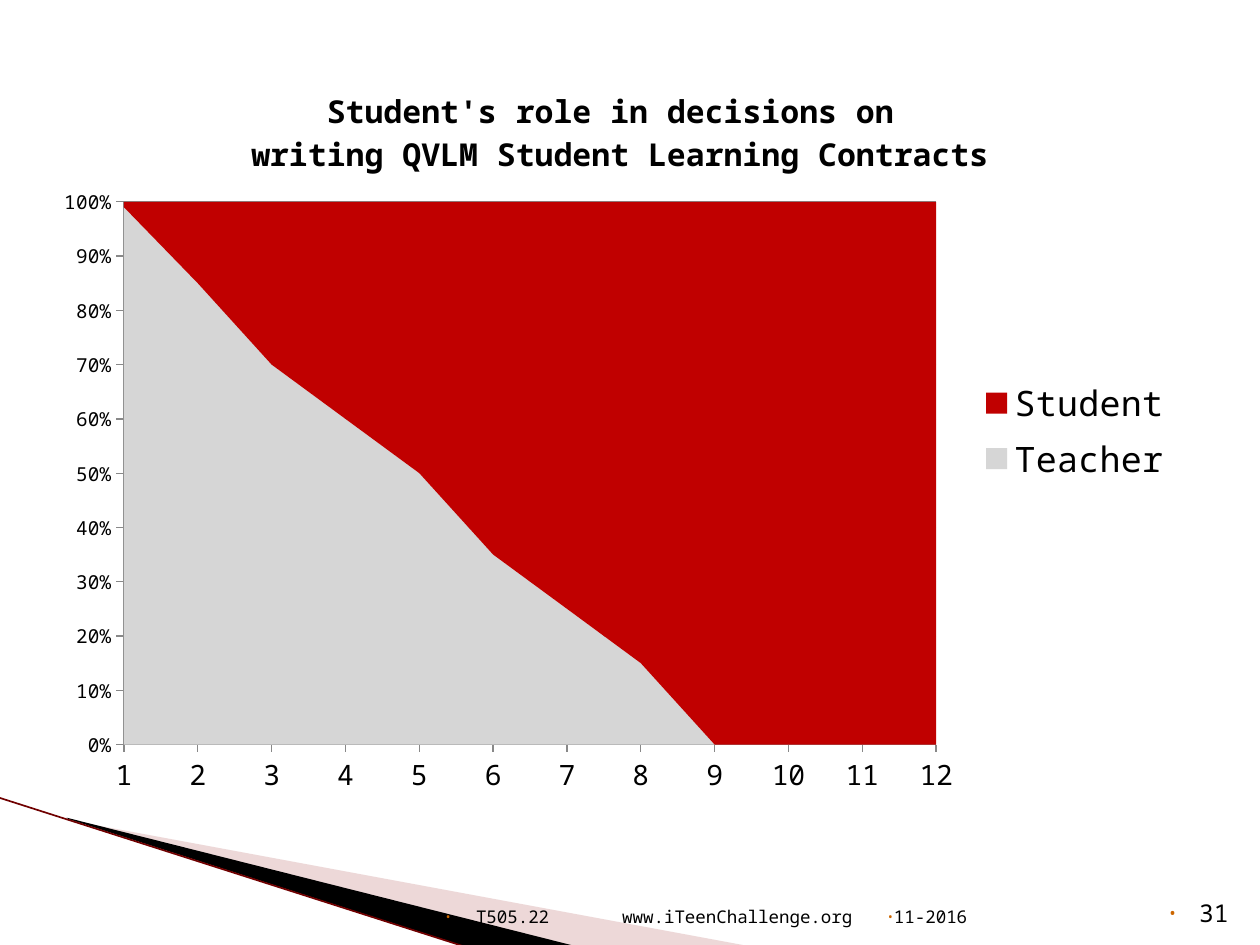
"""Build a slide with a stacked area chart of student and teacher roles."""
from lxml import etree
from pptx import Presentation
from pptx.chart.data import CategoryChartData
from pptx.dml.color import RGBColor
from pptx.enum.chart import XL_CHART_TYPE as Kind, XL_LEGEND_POSITION as Spot, XL_TICK_MARK as Tick
from pptx.enum.shapes import MSO_CONNECTOR as Link
from pptx.enum.text import MSO_ANCHOR as Anchor, PP_ALIGN as Align
from pptx.oxml.ns import qn
from pptx.util import Inches, Pt

FONT = "Noto Sans Mono"
BLACK = RGBColor(0, 0, 0)
GRAY = RGBColor(0xD6, 0xD6, 0xD6)
RED = RGBColor(0xC0, 0, 0)
ROSE = RGBColor(0xD2, 0x9E, 0x9E)
DARK = RGBColor(0x70, 0, 0)
RULE = RGBColor(0x88, 0x88, 0x88)
ORANGE = "CC6600"

TITLE = ["Student's role in decisions on ", "writing QVLM Student Learning Contracts"]
TEACHER = [99, 85, 70, 60, 50, 35, 25, 15, 0, 0, 0, 0]
SERIES = [
    ("Teacher", TEACHER, GRAY),
    ("Student", [100 - part for part in TEACHER], RED),
]
WEDGES = [
    ([(0.55, 6.51), (5.95, 7.51), (4.56, 7.51), (0.55, 6.5)], ROSE, 40),
    ([(0.53, 6.49), (4.57, 7.51), (3.72, 7.52), (0.54, 6.5)], BLACK, 100),
]
EDGE = (-0.01, 6.33, 3.71, 7.52)
FOOTERS = [
    ("T505.22", dict(left=3.43, wide=1.4, hang=0.25)),
    ("www.iTeenChallenge.org", dict(left=4.84, wide=2.1)),
    ("11-2016", dict(left=6.94, wide=2.1, hang=0)),
    ("31", dict(left=9.08, wide=0.77, hang=0.25, size=14, align=Align.RIGHT)),
]


def style(font, size, bold=False):
    font.name, font.size, font.bold = FONT, Pt(size), bold
    font.color.rgb = BLACK


def add_text(slide, text, left, wide, hang=None, size=10, align=Align.LEFT):
    box = slide.shapes.add_textbox(Inches(left), Inches(7.01), Inches(wide), Inches(0.4))
    frame = box.text_frame
    frame.word_wrap = True
    frame.vertical_anchor = Anchor.BOTTOM
    para = frame.paragraphs[0]
    para.alignment = align
    if hang is not None:
        props = para._p.get_or_add_pPr()
        props.set("marL", str(Inches(hang)))
        props.set("indent", str(-Inches(hang)))
        tint = etree.SubElement(props, qn("a:buClr"))
        etree.SubElement(tint, qn("a:srgbClr"), val=ORANGE)
        etree.SubElement(props, qn("a:buSzPct"), val="68000")
        etree.SubElement(props, qn("a:buFont"), typeface=FONT)
        etree.SubElement(props, qn("a:buChar"), char="•")
    run = para.add_run()
    run.text = text
    style(run.font, size)


def add_wedge(slide, points, color, alpha):
    spots = [(Inches(x), Inches(y)) for x, y in points]
    path = slide.shapes.build_freeform(*spots[0])
    path.add_line_segments(spots[1:], close=True)
    wedge = path.convert_to_shape()
    wedge.shadow.inherit = False
    wedge.fill.solid()
    wedge.fill.fore_color.rgb = color
    wedge.line.fill.background()
    if alpha < 100:
        tint = wedge._element.spPr.find(f".//{qn('a:srgbClr')}")
        etree.SubElement(tint, qn("a:alpha"), val=str(alpha * 1000))


def add_edge(slide):
    edge = slide.shapes.add_connector(Link.STRAIGHT, *map(Inches, EDGE))
    edge.line.color.rgb = DARK
    edge.line.width = Pt(0.95)
    etree.SubElement(edge._element.spPr, qn("a:effectLst"))


def set_place(node, after, **parts):
    for old in node.findall(qn("c:layout")):
        node.remove(old)
    layout = etree.Element(qn("c:layout"))
    manual = etree.SubElement(layout, qn("c:manualLayout"))
    for name, val in parts.items():
        etree.SubElement(manual, qn(f"c:{name}"), val=str(val))
    if after is None:
        node.insert(0, layout)
    else:
        after.addnext(layout)


def add_chart(slide):
    data = CategoryChartData()
    data.categories = [str(num) for num in range(1, 13)]
    for name, vals, _ in SERIES:
        data.add_series(name, vals)
    area = map(Inches, (0.33, 0.42, 9.08, 6))
    chart = slide.shapes.add_chart(Kind.AREA_STACKED_100, *area, data).chart
    style(chart.font, 10)
    plot = chart.plots[0]
    plot.vary_by_categories = False
    for series, (_, _, color) in zip(plot.series, SERIES):
        series.format.fill.solid()
        series.format.fill.fore_color.rgb = color
        series.format.line.fill.background()

    chart.has_title = True
    frame = chart.chart_title.text_frame
    for pos, text in enumerate(TITLE):
        para = frame.add_paragraph() if pos else frame.paragraphs[0]
        run = para.add_run()
        run.text = text
        style(run.font, 18, bold=True)
    title = chart.chart_title._element
    set_place(title, title.find(qn("c:tx")), xMode="edge", yMode="edge", x=0.18, y=0.04)
    chart.chart_title.include_in_layout = False
    set_place(
        plot._element.getparent(), None, layoutTarget="inner",
        xMode="edge", yMode="edge", x=0.072, y=0.197, w=0.71, h=0.718,
    )

    chart.has_legend = True
    chart.legend.position = Spot.RIGHT
    chart.legend.include_in_layout = False
    style(chart.legend.font, 20)
    for axis, size in ((chart.category_axis, 16), (chart.value_axis, 11)):
        axis.major_tick_mark, axis.minor_tick_mark = Tick.OUTSIDE, Tick.NONE
        axis.format.line.color.rgb = RULE
        style(axis.tick_labels.font, size)
    value = chart.value_axis
    value.minimum_scale, value.maximum_scale, value.major_unit = 0, 1, 0.1
    value.has_major_gridlines = True
    value.major_gridlines.format.line.color.rgb = RULE
    value.tick_labels.number_format = "0%"
    value.tick_labels.number_format_is_linked = False
    value._element.find(qn("c:crossBetween")).set("val", "midCat")


def main():
    deck = Presentation()
    deck.slide_width, deck.slide_height = Inches(10), Inches(7.5)
    slide = deck.slides.add_slide(deck.slide_layouts[6])
    for wedge in WEDGES:
        add_wedge(slide, *wedge)
    add_edge(slide)
    for text, form in FOOTERS:
        add_text(slide, text, **form)
    add_chart(slide)
    deck.save("out.pptx")


if __name__ == "__main__":
    main()
